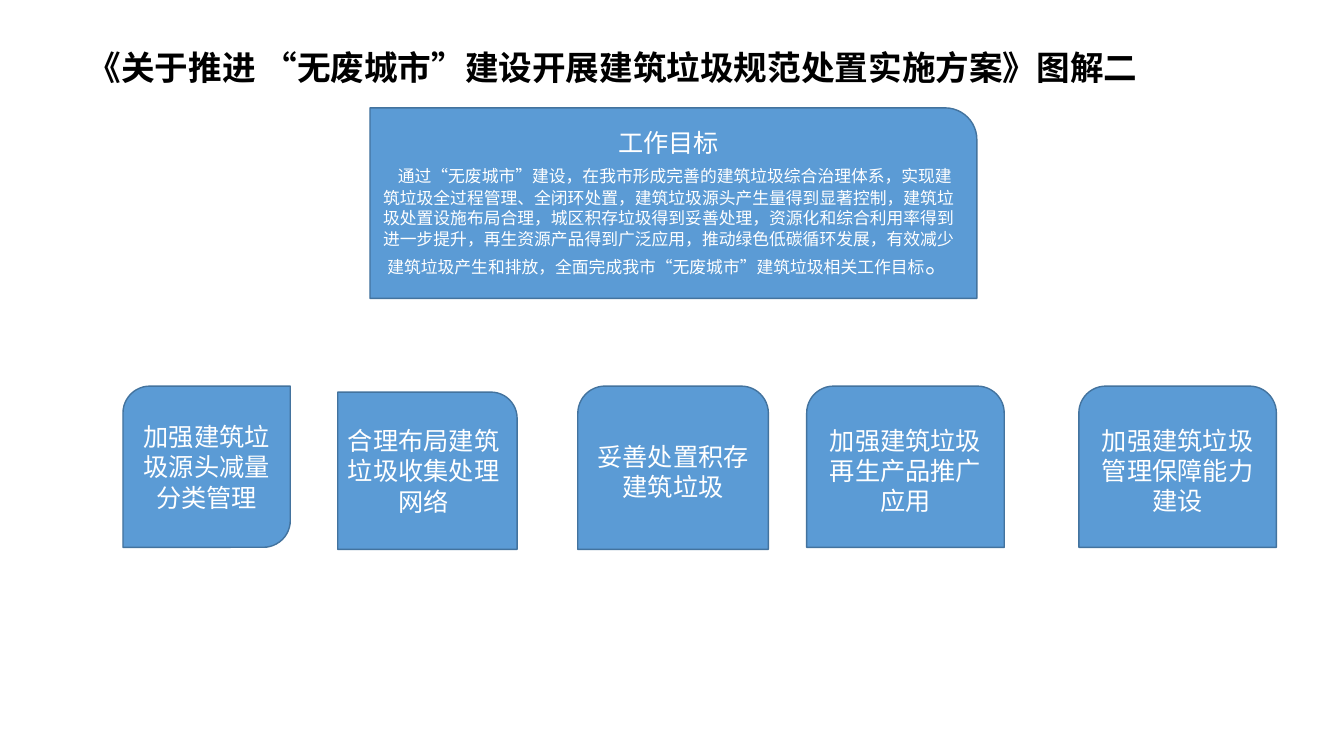
from dataclasses import dataclass

from pptx import Presentation, util as u
from pptx.dml.color import RGBColor
from pptx.enum import shapes, text

SLIDE_WIDTH, SLIDE_HEIGHT = u.Inches(13.33), u.Inches(7.5)
COLOURS = {"title": "000000", "fill": "5B9BD5", "line": "43739E", "text": "FFFFFF"}
TITLE_FORMAT = {"name": "Montserrat", "size": u.Pt(24), "bold": True}
HEADING_FORMAT = {"name": "Arial", "size": u.Pt(18)}
BODY_FORMAT = {"name": "Arial", "size": u.Pt(12)}
FIRST_LINE_INDENT = u.Inches(0.07)
KINDS = shapes.MSO_SHAPE


@dataclass
class Area:
    """Left, top, width and height as percentages of the slide's size."""
    left: float
    top: float
    width: float
    height: float

    def lengths(self) -> tuple:
        across, down = SLIDE_WIDTH / 100, SLIDE_HEIGHT / 100
        return (round(self.left * across), round(self.top * down),
                round(self.width * across), round(self.height * down))


@dataclass
class Card:
    kind: KINDS
    area: Area
    wording: str


def colour(name: str) -> RGBColor:
    return RGBColor.from_string(COLOURS[name])


def add_span(para, wording: str, font_format: dict, colour_name: str = "text") -> None:
    span = para.add_run()
    span.text = wording
    for name, value in font_format.items():
        setattr(span.font, name, value)
    span.font.color.rgb = colour(colour_name)


def add_card(page, card: Card):
    box = page.shapes.add_shape(card.kind, *card.area.lengths())
    box.shadow.inherit = False
    box.fill.solid()
    box.fill.fore_color.rgb = colour("fill")
    box.line.color.rgb = colour("line")
    box.line.width = u.Pt(1)
    box.text_frame.word_wrap = True
    box.text_frame.vertical_anchor = text.MSO_ANCHOR.MIDDLE
    para = box.text_frame.paragraphs[0]
    para.alignment = text.PP_ALIGN.CENTER
    add_span(para, card.wording, HEADING_FORMAT)
    return box


GOAL = Card(KINDS.ROUND_1_RECTANGLE, Area(27.53, 14.27, 45.16, 25.2), "工作目标")
GOAL_BODY = (
    "通过“无废城市”建设，在我市形成完善的建筑垃圾综合治理体系，实现建筑垃圾全过程管理、"
    "全闭环处置，建筑垃圾源头产生量得到显著控制，建筑垃圾处置设施布局合理，"
    "城区积存垃圾得到妥善处理，资源化和综合利用率得到进一步提升，再生资源产品得到广泛应用，"
    "推动绿色低碳循环发展，有效减少建筑垃圾产生和排放，"
    "全面完成我市“无废城市”建筑垃圾相关工作目标"
)
TASKS = [
    Card(KINDS.ROUND_2_DIAG_RECTANGLE, Area(9.15, 51.07, 12.45, 21.33),
         "加强建筑垃圾源头减量分类管理"),
    Card(KINDS.ROUND_1_RECTANGLE, Area(25.13, 51.87, 13.35, 20.8),
         "合理布局建筑垃圾收集处理网络"),
    Card(KINDS.ROUND_2_SAME_RECTANGLE, Area(42.99, 51.07, 14.18, 21.6),
         "妥善处置积存建筑垃圾"),
    Card(KINDS.ROUND_2_SAME_RECTANGLE, Area(60.02, 51.07, 14.7, 21.33),
         "加强建筑垃圾再生产品推广应用"),
    Card(KINDS.ROUND_2_SAME_RECTANGLE, Area(80.27, 51.07, 14.7, 21.33),
         "加强建筑垃圾管理保障能力建设"),
]


def add_title(page) -> None:
    title = page.shapes.title
    title.left, title.top, title.width, title.height = Area(5.78, 4.13, 86.27, 10.13).lengths()
    frame_format = {"word_wrap": True, "auto_size": text.MSO_AUTO_SIZE.NONE,
                    "vertical_anchor": text.MSO_ANCHOR.MIDDLE}
    for name, value in frame_format.items():
        setattr(title.text_frame, name, value)
    para = title.text_frame.paragraphs[0]
    para.alignment = text.PP_ALIGN.LEFT
    para.line_spacing = 0.9
    add_span(para, "《关于推进 “无废城市”建设开展建筑垃圾规范处置实施方案》图解二",
             TITLE_FORMAT, "title")


def add_goal(page) -> None:
    para = add_card(page, GOAL).text_frame.add_paragraph()
    para.alignment = text.PP_ALIGN.CENTER
    properties = para._p.get_or_add_pPr()
    properties.set("marL", "0")
    properties.set("indent", str(FIRST_LINE_INDENT))
    add_span(para, " ", HEADING_FORMAT)
    add_span(para, GOAL_BODY, BODY_FORMAT)
    add_span(para, "。", HEADING_FORMAT)


def main() -> None:
    deck = Presentation()
    deck.slide_width, deck.slide_height = SLIDE_WIDTH, SLIDE_HEIGHT
    page = deck.slides.add_slide(deck.slide_layouts.get_by_name("Title Only"))

    # Title and goal
    add_title(page)
    add_goal(page)

    # Row of tasks
    for task in TASKS:
        add_card(page, task)

    deck.save("out.pptx")


if __name__ == "__main__":
    main()
